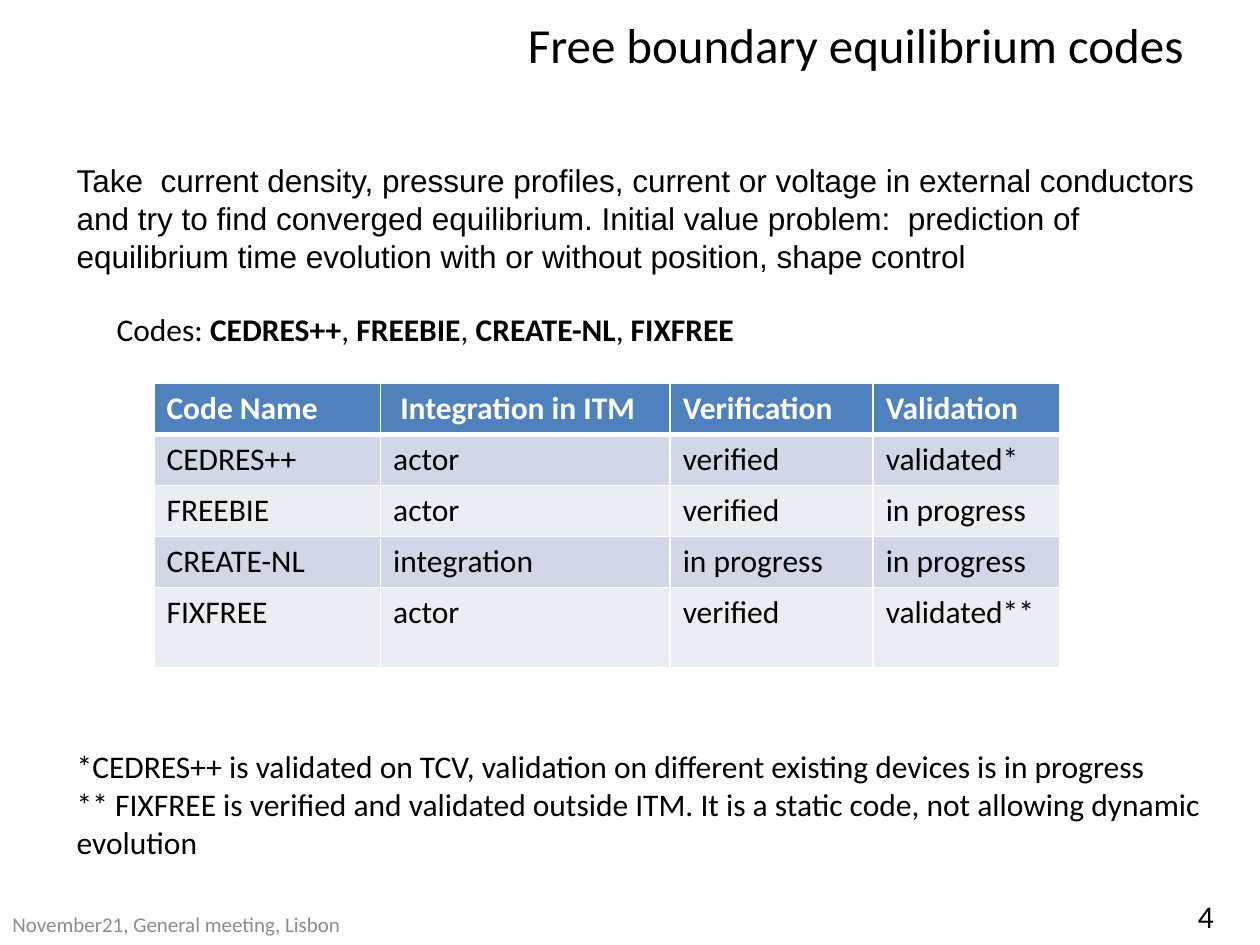
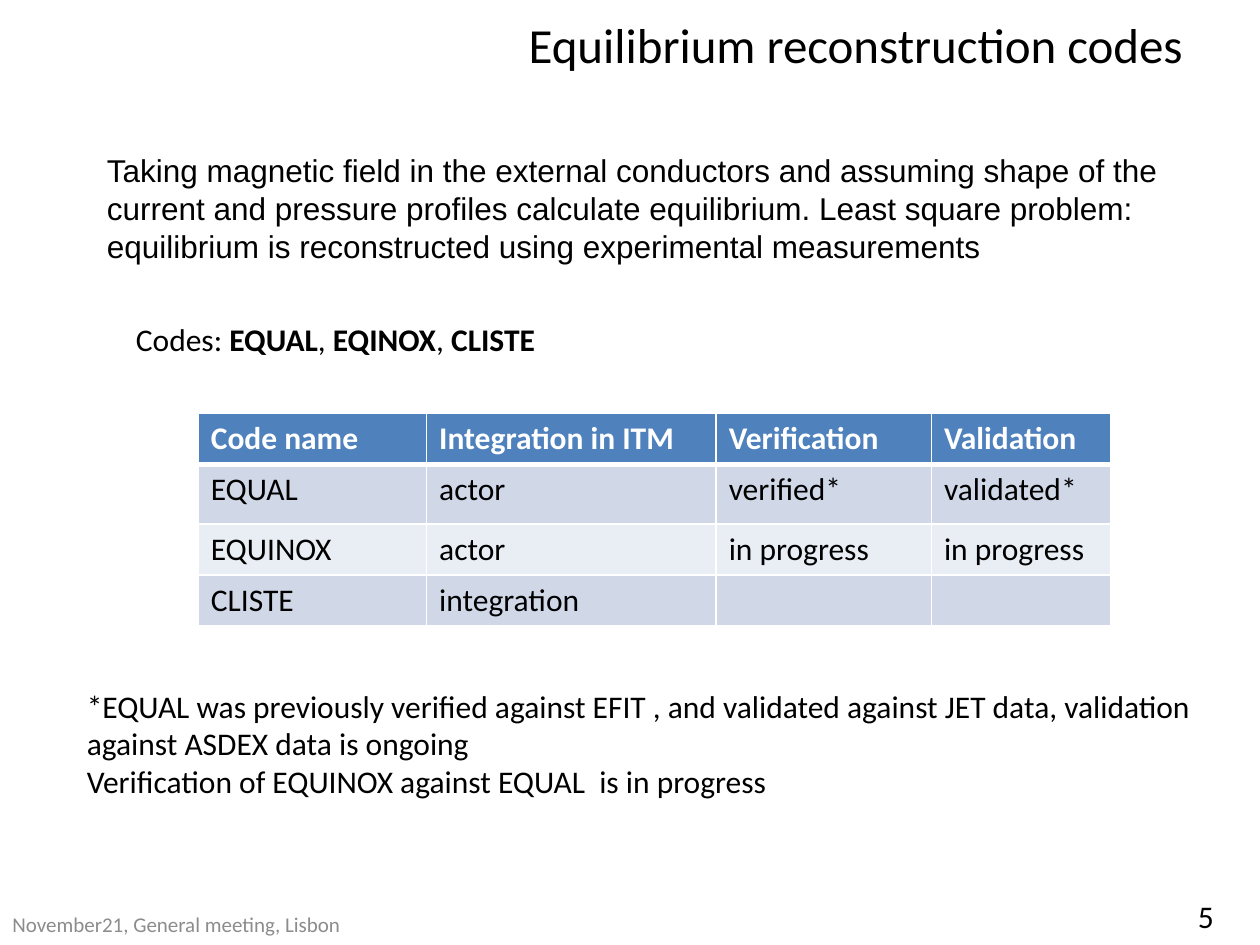
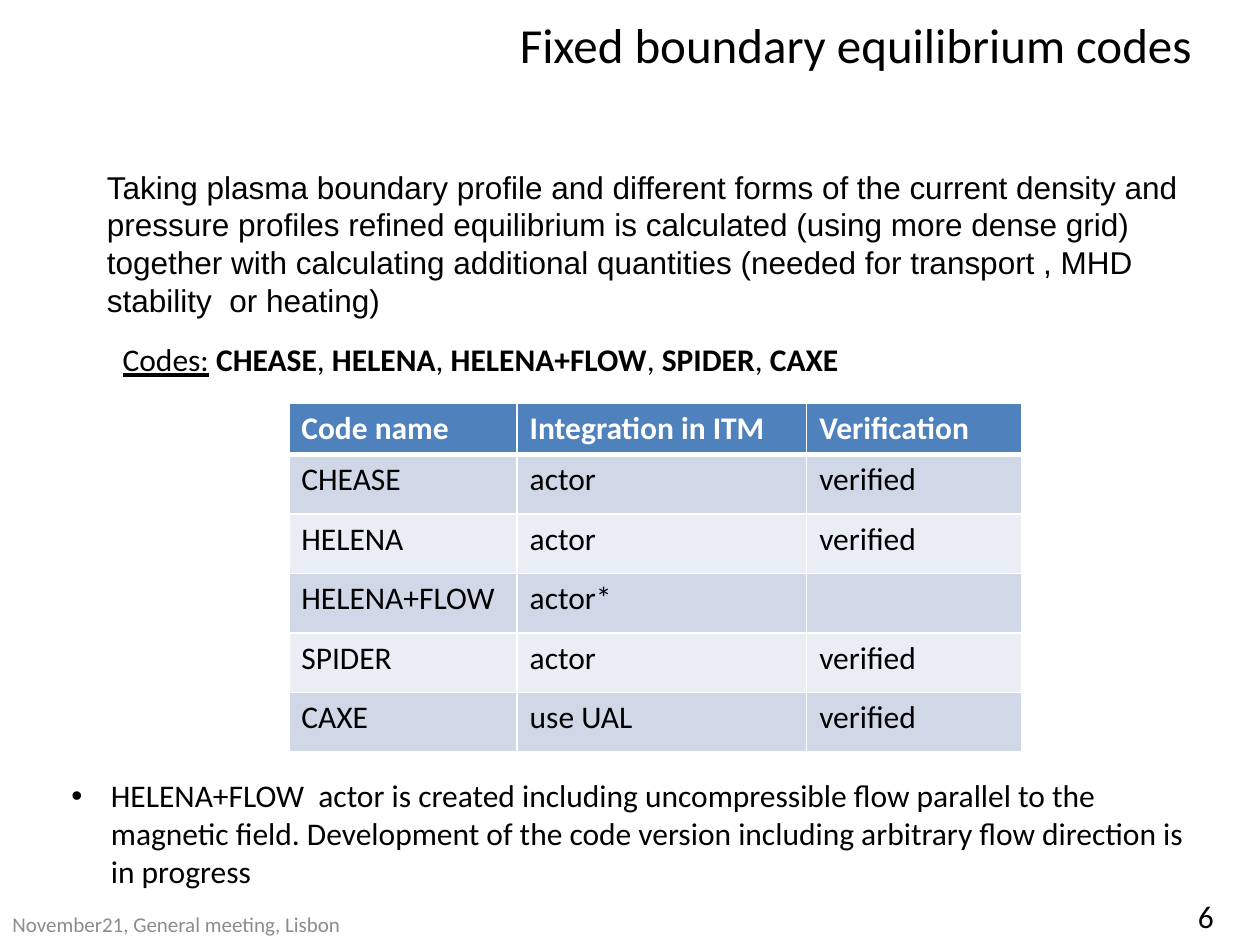
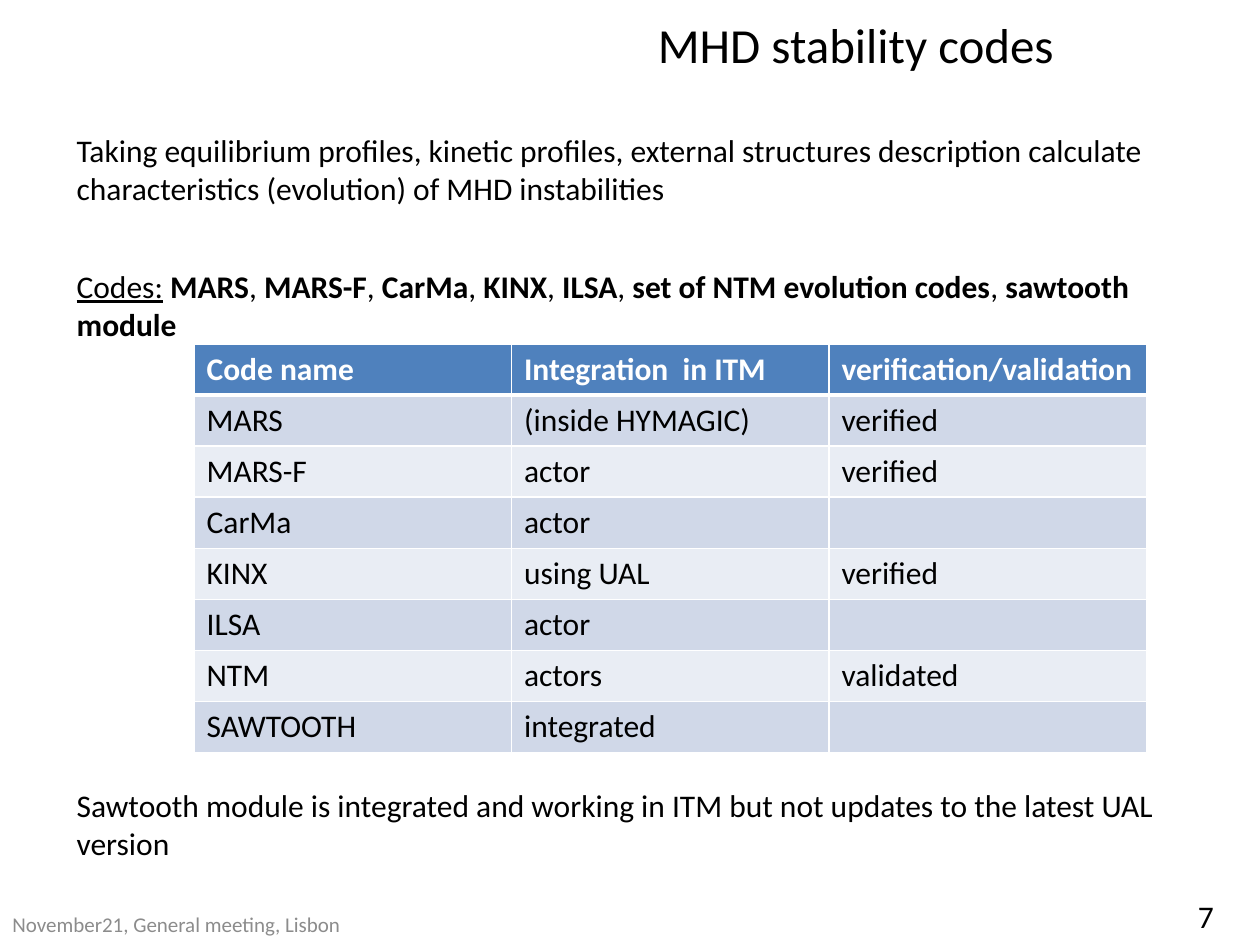
from lxml import etree
from pptx import Presentation
from pptx.dml.color import RGBColor as RGB
from pptx.enum.text import MSO_ANCHOR as Anchor, MSO_AUTO_SIZE as Auto, PP_ALIGN as Align
from pptx.oxml.ns import qn
from pptx.util import Pt

COLOR = {"ink": "000000", "foot": "8C8C8C", "head": "4F81BD",
         "odd": "D0D8E8", "even": "E9EDF4", "line": "FFFFFF"}
SANS, BODY = "Arial", "Calibri"
FOOT = "November21, General meeting, Lisbon"
FIRST = 4           # number of the first slide
ROW, TALL = 29.2, 34  # usual row heights

# Boxes are (left, top, width, height) in points.
SLIDES = [
    {
        "title": "Free boundary equilibrium codes",
        "intro": ("Take  current density, pressure profiles, current or voltage in external "
                  "conductors and try to find converged equilibrium. Initial value problem:  "
                  "prediction of equilibrium time evolution with or without position, shape control"),
        "intro box": (36.7, 88.6, 663, 72.7), "font": SANS,
        "codes": ["CEDRES++", "FREEBIE", "CREATE-NL", "FIXFREE"],
        "codes box": (59.5, 173.5, 370, 29), "wrap": False, "under": False,
        "table at": (88, 219), "cols": [129.5, 165.5, 116, 106.5],
        "rows": [ROW] * 4 + [46],
        "cells": [
            ("Code Name", " Integration in ITM", "Verification", "Validation"),
            ("CEDRES++", "actor", "verified", "validated*"),
            ("FREEBIE", "actor", "verified", "in progress"),
            ("CREATE-NL", "integration", "in progress", "in progress"),
            ("FIXFREE", "actor", "verified", "validated**"),
        ],
        "notes": [
            "*CEDRES++ is validated on TCV, validation on different existing devices is in progress",
            "** FIXFREE is verified and validated outside ITM. It is a static code, "
            "not allowing dynamic evolution",
        ],
        "notes box": (36.7, 423.5, 663, 72.7), "bullet": False,
    },
    {
        "title": "Equilibrium reconstruction codes",
        "intro": ("Taking magnetic field in the external conductors and assuming shape of the "
                  "current and pressure profiles calculate equilibrium. Least square problem: "
                  "equilibrium is reconstructed using experimental measurements"),
        "intro box": (54, 82.8, 641, 72.7), "font": SANS,
        "codes": ["EQUAL", "EQINOX", "CLISTE"],
        "codes box": (70.6, 179.3, 244, 29), "wrap": False, "under": False,
        "table at": (113.3, 236.2), "cols": [130.5, 165.5, 123, 102.5],
        "rows": [ROW, TALL, ROW, ROW],
        "cells": [
            ("Code name", "Integration in ITM", "Verification", "Validation"),
            ("EQUAL", "actor", "verified*", "validated*"),
            ("EQUINOX", "actor", "in progress", "in progress"),
            ("CLISTE", "integration", "", ""),
        ],
        "notes": [
            "*EQUAL was previously verified against EFIT , and validated against JET data, "
            "validation against ASDEX data is ongoing",
            "Verification of EQUINOX against EQUAL  is in progress",
        ],
        "notes box": (42.5, 388.8, 663, 72.7), "bullet": False,
    },
    {
        "title": "Fixed boundary equilibrium codes",
        "intro": ("Taking plasma boundary profile and different forms of the current density and "
                  "pressure profiles refined equilibrium is calculated (using more dense grid) "
                  "together with calculating additional quantities (needed for transport , MHD "
                  "stability  or heating)"),
        "intro box": (54, 92.2, 641, 94.3), "font": SANS,
        "codes": ["CHEASE", "HELENA", "HELENA+FLOW", "SPIDER", "CAXE"],
        "codes box": (63, 190.8, 427, 29), "wrap": False, "under": True,
        "table at": (165, 230.5), "cols": [130.5, 165.5, 123],
        "rows": [ROW] + [TALL] * 5,
        "cells": [
            ("Code name", "Integration in ITM", "Verification"),
            ("CHEASE", "actor", "verified"),
            ("HELENA", "actor", "verified"),
            ("HELENA+FLOW", "actor*", ""),
            ("SPIDER", "actor", "verified"),
            ("CAXE", "use UAL", "verified"),
        ],
        "notes": [
            "HELENA+FLOW  actor is created including uncompressible flow parallel to the "
            "magnetic field. Development of the code version including arbitrary flow "
            "direction is in progress",
        ],
        "notes box": (33.8, 440, 659.5, 72.7), "bullet": True,
    },
    {
        "title": "MHD stability codes",
        "intro": ("Taking equilibrium profiles, kinetic profiles, external structures description "
                  "calculate characteristics (evolution) of MHD instabilities"),
        "intro box": (36.7, 71.3, 663, 51), "font": BODY,
        "codes": ["MARS", "MARS-F", "CarMa", "KINX", "ILSA",
                  "set of NTM evolution codes", "sawtooth module"],
        "codes box": (36.7, 149, 663, 51), "wrap": True, "under": True,
        "table at": (110.9, 196.5), "cols": [181.4] * 3,
        "rows": [ROW] * 8,
        "cells": [
            ("Code name", "Integration  in ITM", "verification/validation"),
            ("MARS", "(inside HYMAGIC)", "verified"),
            ("MARS-F", "actor", "verified"),
            ("CarMa", "actor", ""),
            ("KINX", "using UAL", "verified"),
            ("ILSA", "actor", ""),
            ("NTM", "actors", "validated"),
            ("SAWTOOTH", "integrated", ""),
        ],
        "notes": ["Sawtooth module is integrated and working in ITM but not updates "
                  "to the latest UAL version"],
        "notes box": (36.7, 445.7, 663, 51), "bullet": False,
    },
]


def add_run(para, text, size=18, font=BODY, color="ink", bold=False, under=False):
    run = para.add_run()
    run.text = text
    face = run.font
    face.size, face.name, face.bold = Pt(size), font, bold
    face.color.rgb = RGB.from_string(COLOR[color])
    if under:
        face.underline = True


def add_box(slide, box, wrap=True, anchor=Anchor.TOP, grow=False):
    frame = slide.shapes.add_textbox(*map(Pt, box)).text_frame
    frame.word_wrap = wrap
    frame.vertical_anchor = anchor
    frame.auto_size = Auto.SHAPE_TO_FIT_TEXT if grow else Auto.NONE
    return frame


def add_bullet(para):
    props = para._p.get_or_add_pPr()
    props.set("marL", str(Pt(22.5)))
    props.set("indent", str(Pt(-22.5)))
    etree.SubElement(props, qn("a:buFont")).set("typeface", SANS)
    etree.SubElement(props, qn("a:buChar")).set("char", "•")


def add_frame(slide, title, num):
    """Add the title, footer and number that every slide has."""
    para = add_box(slide, (258, 0, 462, 50.4), anchor=Anchor.MIDDLE).paragraphs[0]
    para.alignment = Align.CENTER
    add_run(para, title, 28)
    foot = add_box(slide, (0, 519, 281, 18), anchor=Anchor.MIDDLE)
    add_run(foot.paragraphs[0], FOOT, 12, color="foot")
    add_run(add_box(slide, (677.5, 509, 44, 31)).paragraphs[0], str(num))


def add_codes(slide, item):
    frame = add_box(slide, item["codes box"], item["wrap"], grow=True)
    para = frame.paragraphs[0]
    add_run(para, "Codes:", under=item["under"])
    for i, name in enumerate(item["codes"]):
        add_run(para, ", " if i else " ")
        add_run(para, name, bold=True)


def add_edges(cell, row):
    """Draw white cell borders, thick between the header and the body."""
    props = cell._tc.get_or_add_tcPr()
    widths = {"L": 1, "R": 1, "T": 3 if row == 1 else 1, "B": 3 if row == 0 else 1}
    for side, width in widths.items():
        line = etree.SubElement(props, qn("a:ln" + side))
        line.set("w", str(Pt(width)))
        fill = etree.SubElement(line, qn("a:solidFill"))
        etree.SubElement(fill, qn("a:srgbClr")).set("val", COLOR["line"])


def add_grid(slide, item):
    cols, rows, cells = item["cols"], item["rows"], item["cells"]
    box = (*item["table at"], sum(cols), sum(rows))
    table = slide.shapes.add_table(len(rows), len(cols), *map(Pt, box)).table
    for col, width in zip(table.columns, cols):
        col.width = Pt(width)
    for r, (height, texts) in enumerate(zip(rows, cells)):
        table.rows[r].height = Pt(height)
        shade = "head" if r == 0 else "odd" if r % 2 else "even"
        for c, text in enumerate(texts):
            cell = table.cell(r, c)
            add_edges(cell, r)
            cell.fill.solid()
            cell.fill.fore_color.rgb = RGB.from_string(COLOR[shade])
            para = cell.text_frame.paragraphs[0]
            para.font.size = Pt(18)
            if text:
                add_run(para, text, color="ink" if r else "line", bold=r == 0)


def add_notes(slide, item):
    frame = add_box(slide, item["notes box"], grow=True)
    for i, text in enumerate(item["notes"]):
        para = frame.add_paragraph() if i else frame.paragraphs[0]
        if item["bullet"]:
            add_bullet(para)
        add_run(para, text)


def main():
    deck = Presentation()
    deck.slide_width, deck.slide_height = Pt(720), Pt(540)
    for num, item in enumerate(SLIDES, FIRST):
        slide = deck.slides.add_slide(deck.slide_layouts[6])
        add_frame(slide, item["title"], num)
        intro = add_box(slide, item["intro box"], grow=True)
        add_run(intro.paragraphs[0], item["intro"], font=item["font"])
        add_codes(slide, item)
        add_grid(slide, item)
        add_notes(slide, item)
    deck.save("out.pptx")


if __name__ == "__main__":
    main()
